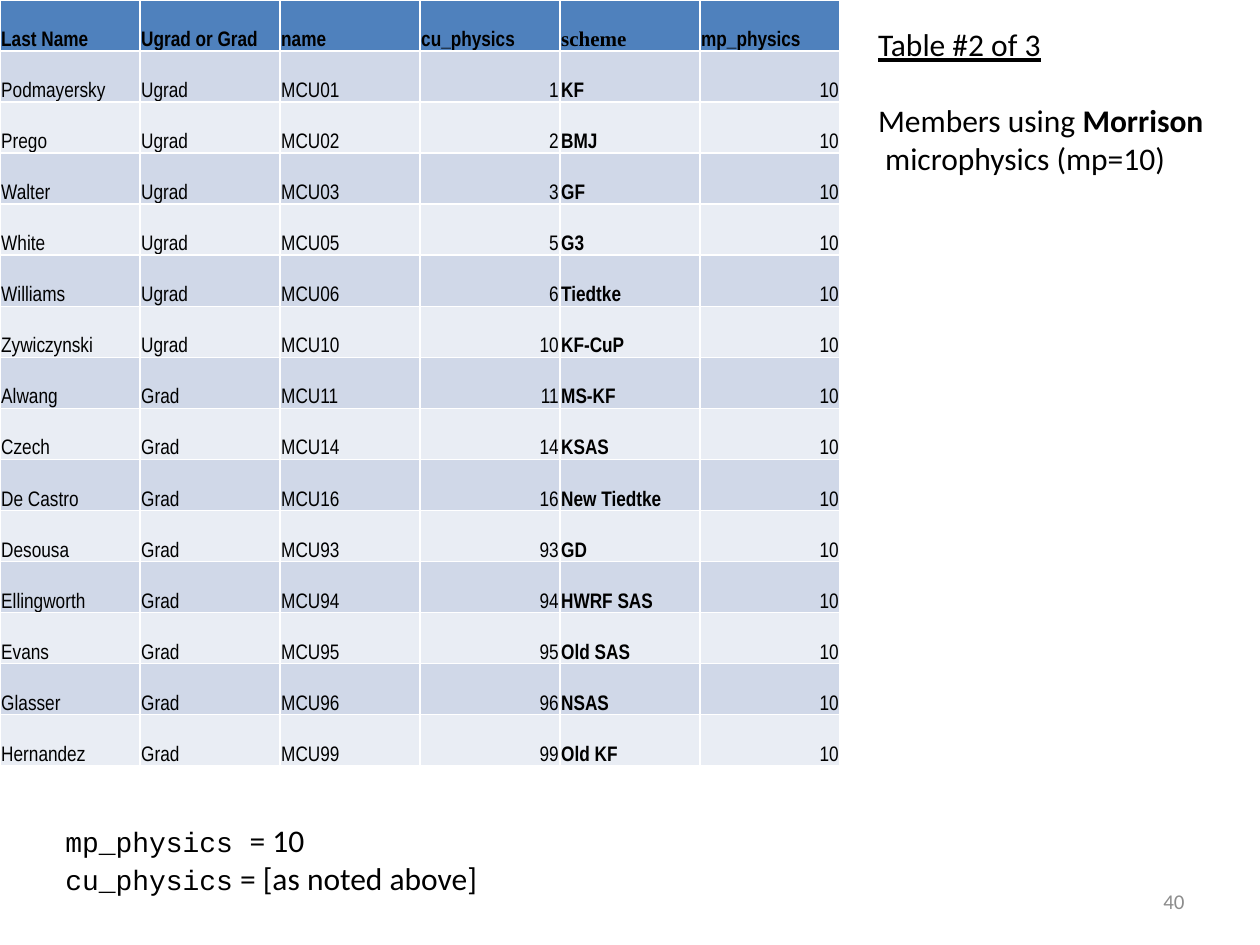
import pptx
import pptx.dml.color
import pptx.enum.text
import pptx.util

# Content
HEADERS = ["Last Name", "Ugrad or Grad", "name", "cu_physics", "scheme", "mp_physics"]
MICROPHYSICS = 10
MEMBERS = [  # last name, level, cu_physics, scheme
    ("Podmayersky", "Ugrad", 1, "KF"),
    ("Prego", "Ugrad", 2, "BMJ"),
    ("Walter", "Ugrad", 3, "GF"),
    ("White", "Ugrad", 5, "G3"),
    ("Williams", "Ugrad", 6, "Tiedtke"),
    ("Zywiczynski", "Ugrad", 10, "KF-CuP"),
    ("Alwang", "Grad", 11, "MS-KF"),
    ("Czech", "Grad", 14, "KSAS"),
    ("De Castro", "Grad", 16, "New Tiedtke"),
    ("Desousa", "Grad", 93, "GD"),
    ("Ellingworth", "Grad", 94, "HWRF SAS"),
    ("Evans", "Grad", 95, "Old SAS"),
    ("Glasser", "Grad", 96, "NSAS"),
    ("Hernandez", "Grad", 99, "Old KF"),
]
BODY = {"font": "Calibri", "size": 18, "color": "text"}
CODE = {"font": "Courier New", "size": 16, "color": "text"}
CELL = {"font": "Arial Narrow", "size": 12, "color": "text"}
NUMBER = {"font": "Calibri", "size": 12, "color": "number"}
CAPTION = [
    [("Table #2 of 3", {**BODY, "underline": True})],
    [("Members using ", BODY), ("Morrison", {**BODY, "bold": True})],
    [(" microphysics (mp=10)", BODY)],
]
SETTINGS = [
    [("mp_physics ", CODE), ("= 10", BODY)],
    [("cu_physics", CODE), (" = [as noted above]", BODY)],
]
COLORS = {
    "text": "000000",
    "number": "8C8C8C",
    "header": "4F81BD",
    "odd": "D0D8E8",
    "even": "E9EDF4",
}

# Layout
WIDTH, HEIGHT = 10, 7.5
TABLE_WIDTH, TABLE_HEIGHT = WIDTH * 2 / 3, 6.08
CELL_INSET = 0.01
LINE_HEIGHT = 1.2

inches = pptx.util.Inches
ALIGN = pptx.enum.text.PP_ALIGN
ANCHOR = pptx.enum.text.MSO_ANCHOR


def color(name):
    return pptx.dml.color.RGBColor.from_string(COLORS[name])


def style_run(run, style):
    run.font.name = style["font"]
    run.font.size = pptx.util.Pt(style["size"])
    run.font.color.rgb = color(style["color"])
    run.font.bold = style.get("bold", False)
    run.font.underline = style.get("underline", False)


def add_text(slide, box, lines, wrap=False):
    shape = slide.shapes.add_textbox(*map(inches, box))
    frame = shape.text_frame
    frame.word_wrap = wrap
    frame.text = "\n".join([""] * len(lines))
    for paragraph, line in zip(frame.paragraphs, lines):
        for text, style in line:
            run = paragraph.add_run()
            run.text = text
            style_run(run, style)
    return frame


def fill_cell(cell, value, fill, style):
    cell.fill.solid()
    cell.fill.fore_color.rgb = color(fill)
    cell.vertical_anchor = ANCHOR.BOTTOM
    cell.margin_left = cell.margin_right = cell.margin_top = inches(CELL_INSET)
    cell.margin_bottom = 0
    cell.text = str(value)
    paragraph = cell.text_frame.paragraphs[0]
    paragraph.alignment = ALIGN.RIGHT if isinstance(value, int) else ALIGN.LEFT
    style_run(paragraph.runs[0], style)


def add_member_table(slide):
    rows = [HEADERS] + [
        [name, level, f"MCU{cumulus:02d}", cumulus, scheme, MICROPHYSICS]
        for name, level, cumulus, scheme in MEMBERS
    ]
    table = slide.shapes.add_table(
        len(rows), len(HEADERS), 0, 0, inches(TABLE_WIDTH), inches(TABLE_HEIGHT)
    ).table
    scheme_column = HEADERS.index("scheme")
    for row_index, row in enumerate(rows):
        is_header = row_index == 0
        fill = "header" if is_header else ("even", "odd")[row_index % 2]
        for column_index, value in enumerate(row):
            is_scheme = column_index == scheme_column
            style = {**CELL, "bold": is_header or is_scheme}
            if is_header and is_scheme:
                style["font"] = "Times New Roman"
            fill_cell(table.cell(row_index, column_index), value, fill, style)


def main():
    presentation = pptx.Presentation()
    presentation.slide_width = inches(WIDTH)
    presentation.slide_height = inches(HEIGHT)
    slide = presentation.slides.add_slide(presentation.slide_layouts[6])

    # Slide number
    number = add_text(slide, (7.17, 6.95, 2.33, 0.4), [[("40", NUMBER)]], wrap=True)
    number.vertical_anchor = ANCHOR.MIDDLE
    number.paragraphs[0].alignment = ALIGN.RIGHT

    # Ensemble members
    add_member_table(slide)

    # Caption, with one line of space under its title
    caption = add_text(slide, (6.87, 0.15, 2.79, 1.31), CAPTION)
    caption.paragraphs[1].space_before = pptx.util.Pt(BODY["size"] * LINE_HEIGHT)

    # Model settings
    add_text(slide, (0.42, 6.47, 3.51, 0.71), SETTINGS)

    presentation.save("out.pptx")


if __name__ == "__main__":
    main()
